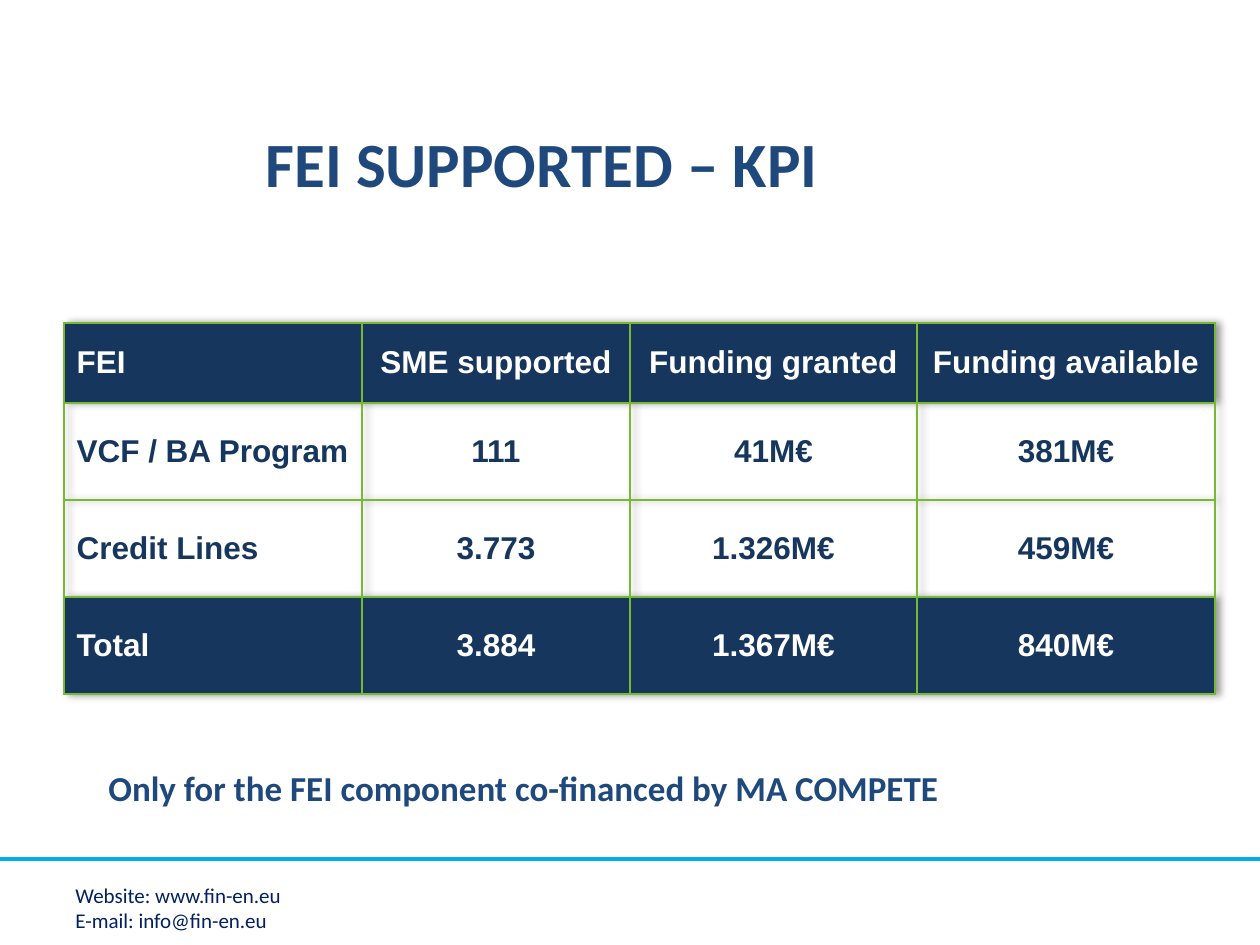
from lxml.etree import SubElement
from pptx import Presentation
from pptx.dml.color import RGBColor
from pptx.enum.shapes import MSO_CONNECTOR as Link
from pptx.enum.text import MSO_ANCHOR as Anchor, PP_ALIGN as Align
from pptx.oxml import parse_xml
from pptx.oxml.ns import nsdecls, qn
from pptx.util import Emu, Pt

NAVY, BLUE, GREEN, WHITE = "17365D", "1F497D", "79B832", "FFFFFF"
NO_STYLE = "{2D5ABB26-0587-4C30-8999-92F81FD0307C}"
COLS = [298, 268, 287, 298]
ROWS = [80, 97, 97, 97]
DATA = [
    ["FEI", "SME supported", "Funding granted", "Funding available"],
    ["VCF / BA Program", "111", "41M€", "381M€"],
    ["Credit Lines", "3.773", "1.326M€", "459M€"],
    ["Total", "3.884", "1.367M€", "840M€"],
]


def px(n):
    return Emu(round(n * 914400 / 126))


def rgb(code):
    return RGBColor.from_string(code)


def add_run(para, text, size, color, bold=False, font="Calibri"):
    run = para.add_run()
    run.text = text
    run.font.name = font
    run.font.size = Pt(size)
    run.font.bold = bold
    run.font.color.rgb = rgb(color)


def add_text(slide, box, lines, size, color, bold=False):
    frame = slide.shapes.add_textbox(*map(px, box)).text_frame
    frame.word_wrap = True
    for i, line in enumerate(lines):
        para = frame.add_paragraph() if i else frame.paragraphs[0]
        add_run(para, line, size, color, bold)


def set_title(slide, box, text):
    title = slide.shapes.title
    title.left, title.top, title.width, title.height = map(px, box)
    frame = title.text_frame
    frame.vertical_anchor = Anchor.MIDDLE
    para = frame.paragraphs[0]
    para.alignment = Align.LEFT
    add_run(para, text, 36, BLUE, True)


def add_rule(slide, y, width):
    rule = slide.shapes.add_connector(Link.STRAIGHT, 0, px(y), px(width), px(y))
    rule.line.color.rgb = rgb("00ACEB")
    rule.line.width = Pt(2.25)
    SubElement(rule._element.spPr, qn("a:effectLst"))


def add_borders(cell):
    props = cell._tc.get_or_add_tcPr()
    for i, side in enumerate(("lnL", "lnR", "lnT", "lnB")):
        props.insert(i, parse_xml(
            f'<a:{side} {nsdecls("a")} w="12700"><a:solidFill>'
            f'<a:srgbClr val="{GREEN}"/></a:solidFill></a:{side}>'))


def add_shadow(table):
    table._tbl.tblPr.insert(0, parse_xml(
        f'<a:effectLst {nsdecls("a")}>'
        '<a:outerShdw blurRad="50800" dist="38100" dir="0">'
        '<a:srgbClr val="000000"><a:alpha val="40000"/></a:srgbClr>'
        '</a:outerShdw></a:effectLst>'))


def fill_cell(cell, text, align, solid):
    cell.vertical_anchor = Anchor.MIDDLE
    if solid:
        cell.fill.solid()
        cell.fill.fore_color.rgb = rgb(NAVY)
    else:
        cell.fill.background()
    add_borders(cell)
    para = cell.text_frame.paragraphs[0]
    para.alignment = align
    add_run(para, text, 18, WHITE if solid else NAVY, True, "Arial")


def add_grid(slide, x, y):
    box = map(px, (x, y, sum(COLS), sum(ROWS)))
    table = slide.shapes.add_table(len(ROWS), len(COLS), *box).table
    table.first_row = table.horz_banding = False
    table._tbl.tblPr.find(qn("a:tableStyleId")).text = NO_STYLE
    add_shadow(table)
    for col, width in zip(table.columns, COLS):
        col.width = px(width)
    for r, (row, height) in enumerate(zip(table.rows, ROWS)):
        row.height = px(height)
        for c, text in enumerate(DATA[r]):
            align = Align.CENTER if c else Align.LEFT
            fill_cell(table.cell(r, c), text, align, r in (0, len(ROWS) - 1))


def main():
    deck = Presentation()
    deck.slide_width, deck.slide_height = px(1260), px(945)
    slide = deck.slides.add_slide(deck.slide_layouts[5])
    add_rule(slide, 859, 1260)
    add_grid(slide, 64, 323)
    add_text(slide, (63, 876, 359, 50),
             ["Website: www.fin-en.eu", "E-mail: info@fin-en.eu"], 12, "002060")
    set_title(slide, (253, 111, 983, 103), "FEI SUPPORTED – KPI")
    add_text(slide, (96, 760, 982, 50),
             ["Only for the FEI component co-financed by MA COMPETE"], 20, BLUE, True)
    deck.save("out.pptx")


if __name__ == "__main__":
    main()
